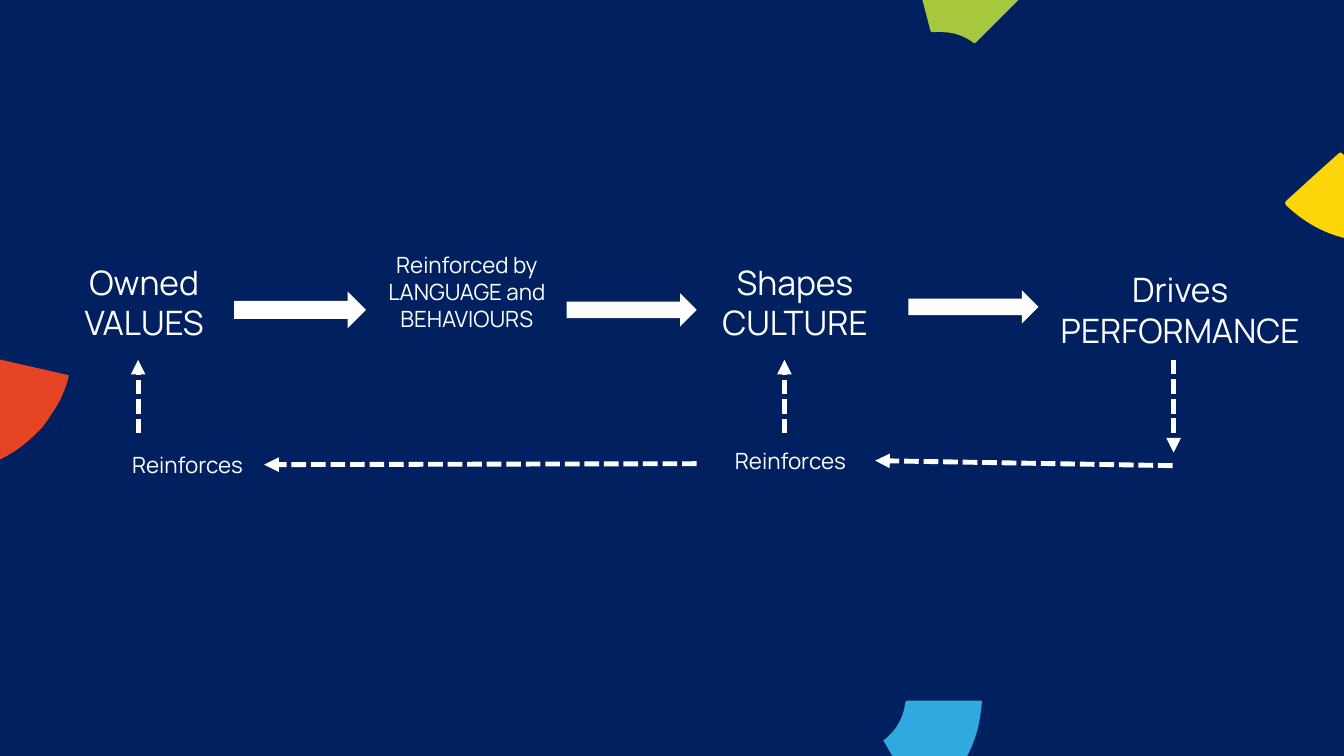
from dataclasses import dataclass

from lxml import etree
from pptx import Presentation
from pptx.dml.color import RGBColor
from pptx.enum.dml import MSO_LINE
from pptx.enum.shapes import MSO_CONNECTOR, MSO_SHAPE
from pptx.enum.text import MSO_ANCHOR, MSO_AUTO_SIZE, PP_ALIGN
from pptx.oxml.ns import qn
from pptx.util import Pt

PX = 9144  # EMU per px, 100 px to the inch
SLIDE_W, SLIDE_H = 1333, 750
BLANK_LAYOUT = 6
RIGHT_ARROW = MSO_SHAPE.RIGHT_ARROW
STRAIGHT = MSO_CONNECTOR.STRAIGHT
SQUARE_DOT = MSO_LINE.SQUARE_DOT
CENTER = PP_ALIGN.CENTER
TOP = MSO_ANCHOR.TOP
GROW = MSO_AUTO_SIZE.SHAPE_TO_FIT_TEXT


@dataclass(frozen=True)
class Theme:
    font: str = "Manrope"
    navy: str = "002060"
    white: str = "FFFFFF"
    green: str = "A7C83D"
    blue: str = "30A9E0"
    yellow: str = "FED508"
    red: str = "E74426"
    stage_size: int = 24
    note_size: int = 16
    dash_width: float = 3.5
    inset: int = 3


THEME = Theme()

# Petals: colour, start point, then lines (2 numbers) and cubic curves (6)
PETALS = [
    (THEME.green, (1019, -9), [
        (968, 42), (967, 43, 966, 44, 965, 42),
        (957, 36, 946, 32, 936, 32), (932, 31, 929, 32, 925, 32),
        (924, 32, 924, 32, 923, 31), (905, -38),
        (904, -39, 904, -40, 906, -40), (924, -44, 942, -44, 960, -40),
        (975, -37, 990, -31, 1004, -22), (1014, -14)]),
    (THEME.blue, (917, 797), [
        (923, 792), (933, 785, 942, 776, 949, 766),
        (959, 753, 966, 738, 970, 722), (972, 714, 973, 705, 974, 696),
        (974, 695, 973, 695, 972, 695), (900, 695),
        (899, 695, 898, 696, 898, 697), (896, 712, 889, 725, 877, 734),
        (875, 735, 876, 735, 877, 736), (904, 783), (913, 799)]),
    (THEME.yellow, (1326, 234), [
        (1307, 228, 1291, 218, 1276, 204), (1274, 201, 1274, 202, 1276, 199),
        (1309, 169), (1328, 152), (1329, 151, 1330, 151, 1331, 152),
        (1338, 159, 1348, 163, 1357, 165), (1363, 166, 1368, 166, 1374, 165),
        (1376, 164, 1376, 165, 1376, 166), (1382, 194), (1392, 237),
        (1392, 238, 1392, 238, 1391, 238), (1382, 240, 1372, 241, 1363, 241),
        (1355, 241, 1347, 240, 1340, 238)]),
    (THEME.red, (42, 424), [
        (25, 442, 8, 454, -13, 461), (-14, 461, -15, 461, -15, 460),
        (-29, 409), (-35, 391), (-35, 389, -35, 389, -33, 388),
        (-20, 382, -10, 371, -5, 357), (-5, 356, -5, 356, -3, 356),
        (67, 372), (68, 372, 69, 372, 68, 374),
        (65, 387, 59, 400, 51, 411), (48, 416, 45, 420, 42, 424)]),
]

# Labels: lines, left, top, width, height, type size
LABELS = [
    ("Owned\nVALUES", 59, 257, 168, 86, THEME.stage_size),
    ("Reinforced by LANGUAGE and BEHAVIOURS", 379, 246, 168, 113, THEME.note_size),
    ("Shapes\nCULTURE", 655, 257, 267, 86, THEME.stage_size),
    ("Drives\nPERFORMANCE", 1037, 264, 267, 86, THEME.stage_size),
    ("Reinforces", 700, 441, 168, 32, THEME.note_size),
    ("Reinforces", 102, 445, 168, 32, THEME.note_size),
]

# Block arrows: left, top, outline width in points
BLOCK_ARROWS = [(233, 291, 1), (562, 291, 0), (901, 288, 0)]
BLOCK_ARROW_W, BLOCK_ARROW_H = 129, 33

# Dashed feedback arrows: from x, y to x, y
FEEDBACK_ARROWS = [
    (1163, 462, 868, 457),
    (691, 460, 262, 461),
    (1164, 357, 1164, 449),
    (778, 430, 778, 357),
    (137, 430, 137, 357),
]


def px(*lengths):
    return [length * PX for length in lengths]


def rgb(colour):
    return RGBColor.from_string(colour)


def paint(shape, colour, outline=0):
    shape.shadow.inherit = False
    shape.fill.solid()
    shape.fill.fore_color.rgb = rgb(colour)
    if outline:
        shape.line.color.rgb = rgb(colour)
        shape.line.width = Pt(outline)
        etree.SubElement(shape.line._get_or_add_ln(), qn("a:miter"), lim="800000")
    else:
        shape.line.fill.background()


def add_petal(slide, colour, start, segments):
    corners = [px(*segment[-2:]) for segment in segments]
    builder = slide.shapes.build_freeform(*px(*start))
    builder.add_line_segments(corners, close=True)
    petal = builder.convert_to_shape()
    paint(petal, colour)

    # Bend the straight sides that have control points
    sides = list(petal._element.iter(qn("a:lnTo")))
    for side, segment in zip(sides, segments):
        if len(segment) == 6:
            bend = etree.Element(qn("a:cubicBezTo"))
            for x, y in zip(px(*segment[::2]), px(*segment[1::2])):
                etree.SubElement(bend, qn("a:pt"),
                                 x=str(x - petal.left), y=str(y - petal.top))
            side.getparent().replace(side, bend)


def add_label(slide, text, left, top, width, height, size):
    frame = slide.shapes.add_textbox(*px(left, top, width, height)).text_frame
    frame.word_wrap = True
    frame.auto_size = GROW
    frame.vertical_anchor = TOP
    frame.margin_left = frame.margin_right = THEME.inset * PX
    frame.margin_top = frame.margin_bottom = THEME.inset * PX
    frame.text = text
    for paragraph in frame.paragraphs:
        paragraph.alignment = CENTER
        for run in paragraph.runs:
            run.font.name = THEME.font
            run.font.size = Pt(size)
            run.font.color.rgb = rgb(THEME.white)


def add_block_arrow(slide, left, top, outline):
    arrow = slide.shapes.add_shape(
        RIGHT_ARROW, *px(left, top, BLOCK_ARROW_W, BLOCK_ARROW_H))
    paint(arrow, THEME.white, outline)


def add_feedback_arrow(slide, *ends):
    arrow = slide.shapes.add_connector(STRAIGHT, *px(*ends))
    arrow.line.color.rgb = rgb(THEME.white)
    arrow.line.width = Pt(THEME.dash_width)
    arrow.line.dash_style = SQUARE_DOT
    properties = arrow.line._get_or_add_ln()
    etree.SubElement(properties, qn("a:tailEnd"), type="triangle")
    etree.SubElement(properties.getparent(), qn("a:effectLst"))


def main():
    deck = Presentation()
    deck.slide_width, deck.slide_height = px(SLIDE_W, SLIDE_H)
    slide = deck.slides.add_slide(deck.slide_layouts[BLANK_LAYOUT])
    slide.background.fill.solid()
    slide.background.fill.fore_color.rgb = rgb(THEME.navy)

    # Decorative petals at the edges
    for petal in PETALS:
        add_petal(slide, *petal)

    # Chain from values to performance
    for label in LABELS:
        add_label(slide, *label)
    for block_arrow in BLOCK_ARROWS:
        add_block_arrow(slide, *block_arrow)

    # Feedback loop
    for ends in FEEDBACK_ARROWS:
        add_feedback_arrow(slide, *ends)

    deck.save("out.pptx")


if __name__ == "__main__":
    main()
